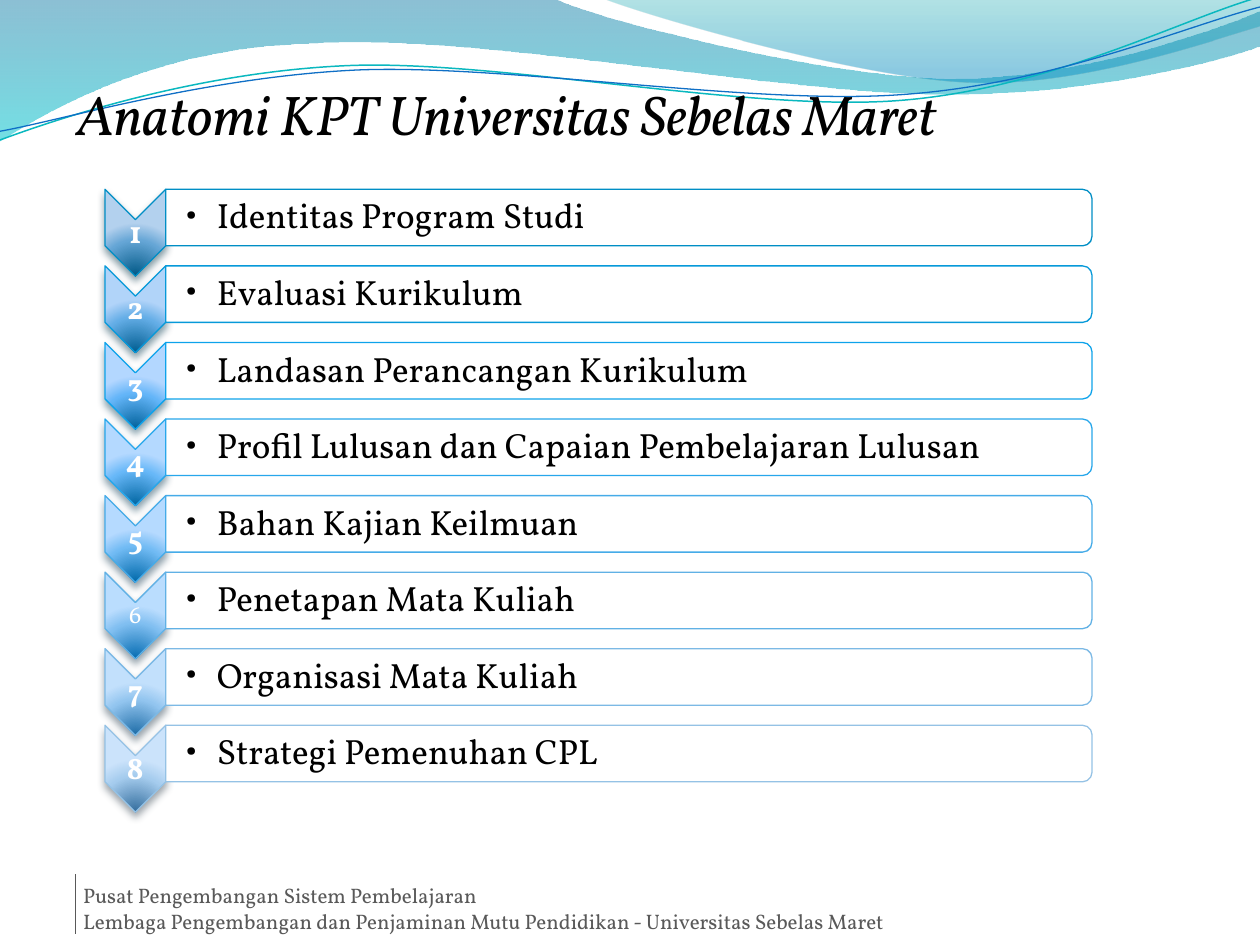
from dataclasses import dataclass

from lxml.etree import SubElement
from pptx import Presentation
from pptx.dml.color import RGBColor
from pptx.enum.shapes import MSO_CONNECTOR as Connector, MSO_SHAPE as Preset
from pptx.enum.text import MSO_ANCHOR as Anchor, PP_ALIGN as Align
from pptx.oxml.ns import qn
from pptx.util import Pt


@dataclass(frozen=True)
class Theme:
    font: str = "Vollkorn"
    ink: str = "000000"
    paper: str = "FFFFFF"
    muted: str = "595959"
    teal_line: str = "0AB8BF"
    blue_line: str = "0F6FC6"
    title_size: float = 32
    item_size: float = 20
    number_size: float = 18
    small_number_size: float = 14
    footer_size: float = 12
    outline: float = 0.75


@dataclass(frozen=True)
class Box:
    left: float
    top: float
    width: float
    height: float

    def lengths(self):
        return Pt(self.left), Pt(self.top), Pt(self.width), Pt(self.height)

    def before_quarter_turn(self) -> "Box":
        """Frame that covers this box once it is rotated by 90 degrees."""
        shift = (self.width - self.height) / 2
        return Box(self.left + shift, self.top - shift, self.height, self.width)


@dataclass(frozen=True)
class Stop:
    position: int
    color: str
    opacity: int = 100


@dataclass(frozen=True)
class Step:
    label: str
    dark: str
    middle: str
    light: str
    outline: str
    shadow: str
    small: bool = False


THEME = Theme()
ROW_TOP, ROW_PITCH = 108.2, 43.75
STEPS = [
    Step("Identitas Program Studi", "005886", "65A6D6", "B3D1EE", "008EC5", "003245"),
    Step("Evaluasi Kurikulum", "005D91", "64AEE7", "B1D4F9", "0699D9", "00374E"),
    Step("Landasan Perancangan Kurikulum", "00619B", "63B5F8", "B3D7FF", "0EA3EB", "033A54"),
    Step("Profil Lulusan dan Capaian Pembelajaran Lulusan",
         "0065A1", "67B8F8", "B4D9FF", "27A7EB", "0C3B54"),
    Step("Bahan Kajian Keilmuan", "0069AB", "71BBF4", "B5DAFF", "45ABE8", "173C53"),
    Step("Penetapan Mata Kuliah", "056CB2", "80BFF1", "BADDFE", "61B1E5", "213E52", True),
    Step("Organisasi Mata Kuliah", "1D6CA7", "92C5EF", "C2E0FC", "7CB9E5", "2B4151"),
    Step("Strategi Pemenuhan CPL", "346E9E", "A5CCEE", "CBE3FB", "95C2E5", "344451"),
]

# Wave outlines: a 2-tuple is a straight step, a 6-tuple a Bézier step
BROAD_WAVE = [(0, 0), (317, -0.7), (343, 12, 478, 45, 546, 45), (614, 45, 690, 19, 720, 6.5),
              (721, 26), (708, 32, 626, 55, 537, 54), (448, 54, 275, 20, 185, 24.5),
              (93, 26, 33, 60, -0.7, 81), (0, 0)]
RIGHT_WAVE = [(345, -0.7), (366, 8, 491, 45, 554, 47), (616, 50, 692, 23, 720, 15), (720, 0),
              (345, -0.7)]
TEAL_CURVE = [(0, 80), (35, 67, 114, 41, 199, 37.5), (284, 34, 427, 64, 513, 57.5),
              (600, 51, 675, 11, 719, -1.5)]
BLUE_CURVE = [(0, 75), (34, 69, 118, 44, 204, 40), (290, 36.5, 430, 60.5, 516, 54),
              (602, 48, 677, 15, 720, 4)]


def rgb(color: str) -> RGBColor:
    return RGBColor.from_string(color)


def add_color(parent, color: str, opacity: int = 100) -> None:
    node = SubElement(parent, qn("a:srgbClr"), val=color)
    if opacity < 100:
        SubElement(node, qn("a:alpha"), val=str(opacity * 1000))


def set_gradient(shape, stops: list[Stop], radial: bool = False) -> None:
    shape.fill.gradient()
    gradient = shape.fill._fill._gradFill
    for child in list(gradient):
        gradient.remove(child)
    gradient.set("rotWithShape", "0" if radial else "1")
    stop_list = SubElement(gradient, qn("a:gsLst"))
    for stop in stops:
        node = SubElement(stop_list, qn("a:gs"), pos=str(stop.position * 1000))
        add_color(node, stop.color, stop.opacity)
    if radial:
        center = SubElement(gradient, qn("a:path"), path="circle")
        SubElement(center, qn("a:fillToRect"), l="50000", t="130000", r="50000", b="-30000")
    else:
        SubElement(gradient, qn("a:lin"), ang="5400000", scaled="1")


def set_line(shape, color: str, width: float) -> None:
    shape.line.color.rgb = rgb(color)
    shape.line.width = Pt(width)


def add_wave(slide, steps: list[tuple], close: bool):
    start, *rest = [(Pt(step[i]), Pt(step[i + 1])) for step in steps
                    for i in range(0, len(step), 2)]
    builder = slide.shapes.build_freeform(*start)
    builder.add_line_segments(rest, close=close)
    wave = builder.convert_to_shape()
    wave.shadow.inherit = False
    # Join the three points of each Bézier step into one curve
    segments = iter(list(wave._element.iter(qn("a:lnTo"))))
    for step in steps[1:]:
        first = next(segments)
        if len(step) == 6:
            curve = first.makeelement(qn("a:cubicBezTo"))
            first.addprevious(curve)
            for segment in (first, next(segments), next(segments)):
                curve.append(segment[0])
                segment.getparent().remove(segment)
    return wave


def add_filled_wave(slide, steps: list[tuple], stops: list[Stop]) -> None:
    wave = add_wave(slide, steps, close=True)
    set_gradient(wave, stops)
    wave.line.fill.background()


def add_curve(slide, steps: list[tuple], color: str, width: float) -> None:
    curve = add_wave(slide, steps, close=False)
    curve.fill.background()
    set_line(curve, color, width)


def add_text(slide, box: Box, lines: list[str], size: float, color: str = THEME.ink,
             insets: tuple = (7.2, 3.6, 7.2, 3.6), anchor=Anchor.TOP, align=Align.LEFT,
             spacing: float = 1, bold: bool = False, italic: bool = False,
             bullet: bool = False) -> None:
    frame = slide.shapes.add_textbox(*box.lengths()).text_frame
    frame.word_wrap = True
    frame.vertical_anchor = anchor
    (frame.margin_left, frame.margin_top,
     frame.margin_right, frame.margin_bottom) = map(Pt, insets)
    frame.text = "\n".join(lines)
    for paragraph in frame.paragraphs:
        paragraph.alignment = align
        paragraph.line_spacing = spacing
        if bullet:
            paragraph.level = 1
            properties = paragraph._p.get_or_add_pPr()
            properties.set("marL", str(Pt(18)))
            properties.set("indent", str(-Pt(18)))
            SubElement(properties, qn("a:buFont"), typeface=THEME.font)
            SubElement(properties, qn("a:buChar"), char="•")
        font = paragraph.font
        font.name, font.size, font.color.rgb = THEME.font, Pt(size), rgb(color)
        font.bold, font.italic = bold, italic


def add_turned(slide, preset, box: Box, outline: str):
    shape = slide.shapes.add_shape(preset, *box.before_quarter_turn().lengths())
    shape.rotation = 90
    shape.shadow.inherit = False
    set_line(shape, outline, THEME.outline)
    return shape


def add_step(slide, number: int, step: Step) -> None:
    top = ROW_TOP + (number - 1) * ROW_PITCH
    # Numbered chevron
    chevron = add_turned(slide, Preset.CHEVRON, Box(60, top, 34.7, 49.6), step.outline)
    set_gradient(chevron, [Stop(0, step.dark), Stop(68, step.middle), Stop(100, step.light)],
                 radial=True)
    effects = chevron._element.spPr.find(qn("a:effectLst"))
    shadow = SubElement(effects, qn("a:outerShdw"), blurRad=str(Pt(4.5)), dist=str(Pt(3)),
                        dir="5400000", rotWithShape="0")
    add_color(shadow, step.shadow, 48)
    add_text(slide, Box(60, top + 17.4, 34.7, 15), [str(number)],
             THEME.small_number_size if step.small else THEME.number_size, THEME.paper,
             (0.7,) * 4, Anchor.MIDDLE, Align.CENTER, 0.9, bold=not step.small)
    # Label bar
    bar = add_turned(slide, Preset.ROUND_2_SAME_RECTANGLE, Box(94.7, top, 529.3, 32.3),
                     step.outline)
    bar.fill.solid()
    bar.fill.fore_color.rgb = rgb(THEME.paper)
    add_text(slide, Box(94.7, top + 1.6, 527.7, 29), [step.label], THEME.item_size,
             insets=(11.2, 0.7, 0.7, 0.7), anchor=Anchor.MIDDLE, spacing=0.9, bullet=True)


def main() -> None:
    deck = Presentation()
    deck.slide_width, deck.slide_height = Pt(720), Pt(540)
    slide = deck.slides.add_slide(deck.slide_layouts[6])

    # Waves across the top
    add_filled_wave(slide, BROAD_WAVE, [Stop(0, "0074A1", 45), Stop(100, "00C6CF", 55)])
    add_filled_wave(slide, RIGHT_WAVE, [Stop(0, "00A1A9", 30), Stop(80, "008BBF", 45)])
    add_curve(slide, TEAL_CURVE, THEME.teal_line, 0.85)
    add_curve(slide, BLUE_CURVE, THEME.blue_line, 0.75)

    # Footer with its rule
    add_text(slide, Box(47.5, 501, 618.5, 36),
             ["Pusat Pengembangan Sistem Pembelajaran",
              "Lembaga Pengembangan dan Penjaminan Mutu Pendidikan - Universitas Sebelas Maret"],
             THEME.footer_size, THEME.muted, (0, 3.6, 1.4, 3.6))
    rule = slide.shapes.add_connector(Connector.STRAIGHT, Pt(43.2), Pt(499.7), Pt(43.2), Pt(534))
    set_line(rule, THEME.muted, 1)
    SubElement(rule._element.spPr, qn("a:effectLst"))

    # Numbered steps
    for number, step in enumerate(STEPS, start=1):
        add_step(slide, number, step)

    # Title
    add_text(slide, Box(36.7, 41.8, 648, 66), ["Anatomi KPT Universitas Sebelas Maret"],
             THEME.title_size, italic=True)

    deck.save("out.pptx")


if __name__ == "__main__":
    main()
